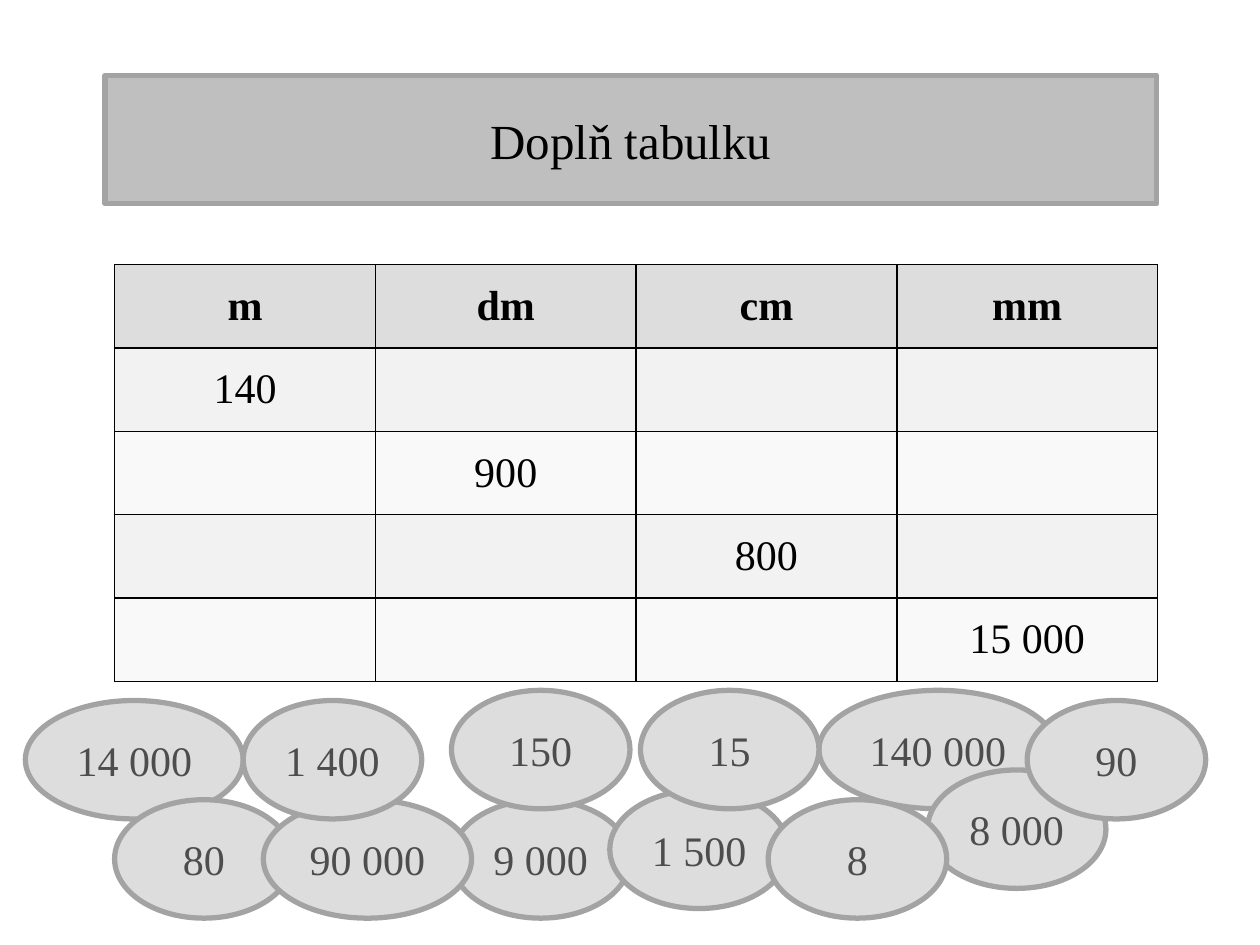
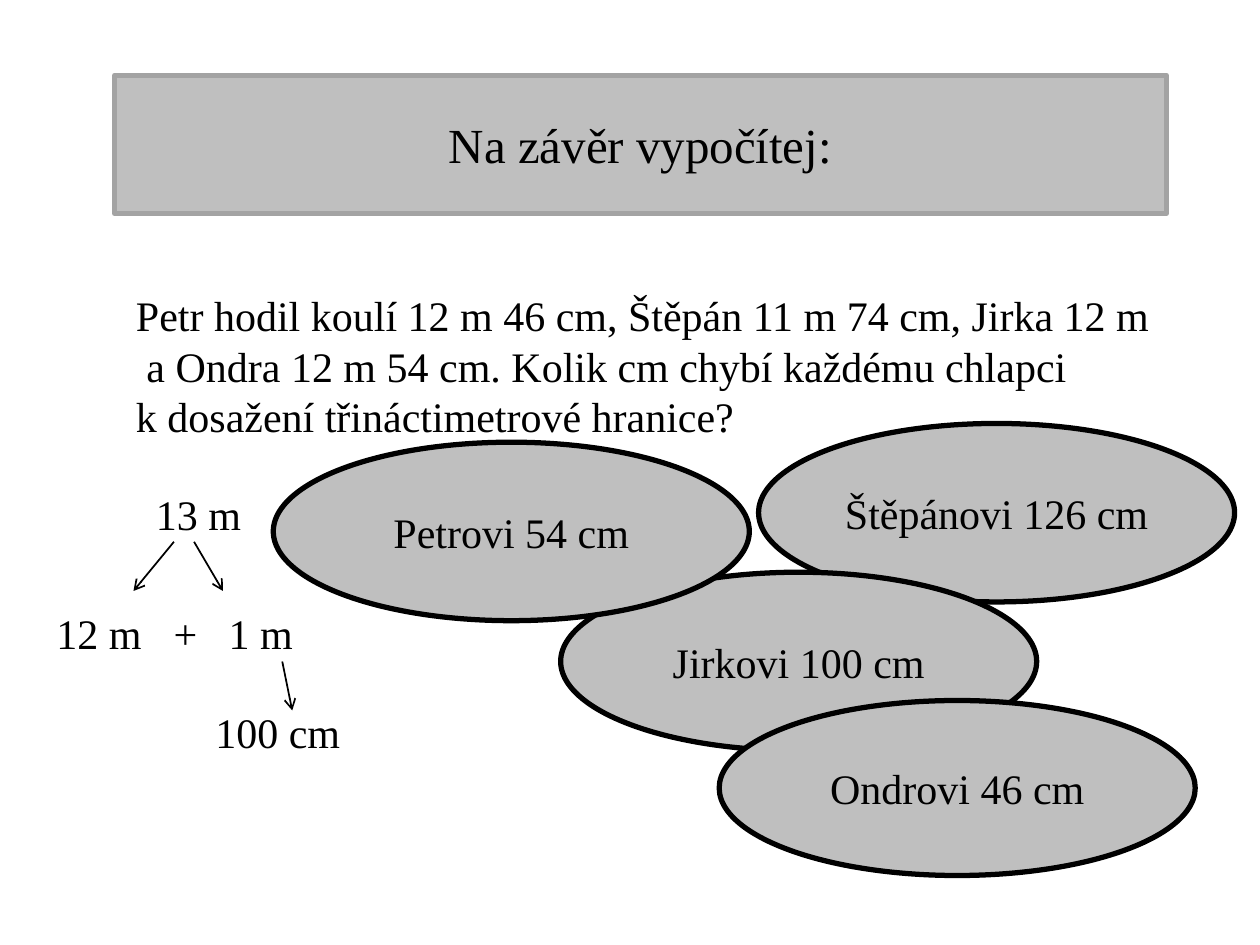
from dataclasses import dataclass

from lxml import etree
from pptx import Presentation
from pptx import util as u
from pptx.dml.color import RGBColor
from pptx.enum import shapes, text
from pptx.oxml.ns import qn


@dataclass(frozen=True)
class Theme:
    font: str = "Times New Roman"
    title_size: int = 28
    text_size: int = 24
    thick: int = 3
    thin: int = 1
    ink: str = "000000"
    soft_ink: str = "4D4D4D"
    band: str = "BFBFBF"
    edge: str = "A3A3A3"
    header: str = "DDDDDD"
    odd_row: str = "F2F2F2"
    even_row: str = "F9F9F9"


THEME = Theme()
CENTER, LEFT = text.PP_ALIGN.CENTER, text.PP_ALIGN.LEFT
MIDDLE, TOP = text.MSO_ANCHOR.MIDDLE, text.MSO_ANCHOR.TOP


# Formatting helpers
def points(*lengths):
    return [u.Pt(length) for length in lengths]


def place(shape, box):
    shape.left, shape.top, shape.width, shape.height = points(*box)


def paint(shape, fill, line):
    shape.fill.solid()
    shape.fill.fore_color.rgb = RGBColor.from_string(fill)
    shape.line.color.rgb = RGBColor.from_string(line)
    shape.line.width = u.Pt(THEME.thick)


def write(frame, *lines, size=THEME.text_size, color=THEME.ink, bold=False,
          align=LEFT, anchor=TOP):
    frame.word_wrap = True
    frame.auto_size = text.MSO_AUTO_SIZE.NONE
    frame.vertical_anchor = anchor
    for index, line in enumerate(lines):
        paragraph = frame.add_paragraph() if index else frame.paragraphs[0]
        paragraph.alignment = align
        paragraph.space_before = u.Pt(0)
        run = paragraph.add_run()
        run.text = line
        run.font.name = THEME.font
        run.font.size = u.Pt(size)
        run.font.bold = bold
        run.font.color.rgb = RGBColor.from_string(color)


def remove_bullets(frame):
    for paragraph in frame.paragraphs:
        properties = paragraph._p.get_or_add_pPr()
        properties.set("marL", "0")
        properties.set("indent", "0")
        etree.SubElement(properties, qn("a:buNone"))


def add_cell_borders(cell):
    properties = cell._tc.get_or_add_tcPr()
    for index, side in enumerate(("lnL", "lnR", "lnT", "lnB")):
        border = etree.Element(qn(f"a:{side}"), w=str(u.Pt(THEME.thin)))
        fill = etree.SubElement(border, qn("a:solidFill"))
        etree.SubElement(fill, qn("a:srgbClr"), val=THEME.ink)
        properties.insert(index, border)


# Slide elements
def add_title(slide, title, box):
    shape = slide.shapes.title
    place(shape, box)
    paint(shape, THEME.band, THEME.edge)
    write(shape.text_frame, title, size=THEME.title_size, align=CENTER, anchor=MIDDLE)


def add_body(slide, lines, box):
    body = slide.placeholders[1]
    place(body, box)
    write(body.text_frame, *lines)
    remove_bullets(body.text_frame)


def add_label(slide, label, box):
    write(slide.shapes.add_textbox(*points(*box)).text_frame, label)


def add_ellipse(slide, label, box, fill, line, color):
    shape = slide.shapes.add_shape(shapes.MSO_SHAPE.OVAL, *points(*box))
    shape.shadow.inherit = False
    paint(shape, fill, line)
    frame = shape.text_frame
    frame.margin_left = frame.margin_right = 0
    write(frame, label, color=color, align=CENTER, anchor=MIDDLE)


def add_arrow(slide, start, end):
    arrow = slide.shapes.add_connector(shapes.MSO_CONNECTOR.STRAIGHT,
                                       *points(*start, *end))
    arrow.line.color.rgb = RGBColor.from_string(THEME.ink)
    arrow.line.width = u.Pt(THEME.thin)
    etree.SubElement(arrow.line._get_or_add_ln(), qn("a:tailEnd"), type="arrow")
    etree.SubElement(arrow._element.spPr, qn("a:effectLst"))


def add_unit_table(slide, rows, box):
    table = slide.shapes.add_table(len(rows), len(rows[0]), *points(*box)).table
    table.first_row = table.horz_banding = False
    for row_index, row in enumerate(rows):
        fill = THEME.odd_row if row_index % 2 else THEME.even_row
        if row_index == 0:
            fill = THEME.header
        for column_index, value in enumerate(row):
            cell = table.cell(row_index, column_index)
            cell.fill.solid()
            cell.fill.fore_color.rgb = RGBColor.from_string(fill)
            add_cell_borders(cell)
            if value:
                cell.vertical_anchor = MIDDLE
                write_cell(cell, value, bold=row_index == 0)


def write_cell(cell, value, bold):
    write(cell.text_frame, value, bold=bold, align=CENTER, anchor=MIDDLE)


# Slide 1: unit table with the numbers to fill in
def build_table_slide(presentation):
    slide = presentation.slides.add_slide(presentation.slide_layouts[5])
    add_title(slide, "Doplň tabulku", (60, 43, 601, 73.5))

    units = ["m", "dm", "cm", "mm"]
    given = ["140", "900", "800", "15 000"]
    rows = [units] + [[value if column == row else "" for column in range(len(units))]
                      for row, value in enumerate(given)]
    add_unit_table(slide, rows, (65.5, 151.2, 596, 238.25))

    height, normal = 67.7, 102
    answers = [
        ("14 000", 14.5, 400.3, 124.5),
        ("140 000", 468, 394.5, 136),
        ("8 000", 530, 440, normal),
        ("90", 587, 400.3, normal),
        ("9 000", 258, 457, normal),
        ("150", 258, 394.5, normal),
        ("1 500", 348.5, 451.5, normal),
        ("15", 366, 394.5, normal),
        ("8", 439, 457, normal),
        ("80", 65.5, 457, normal),
        ("90 000", 150.5, 457, 119),
        ("1 400", 139, 400.3, normal),
    ]
    for label, left, top, width in answers:
        add_ellipse(slide, label, (left, top, width, height),
                    THEME.header, THEME.edge, THEME.soft_ink)


# Slide 2: word problem, conversion tree and results
def build_problem_slide(presentation):
    slide = presentation.slides.add_slide(presentation.slide_layouts[1])
    add_title(slide, "Na závěr vypočítej:", (65.5, 43, 601, 79))
    add_body(slide, [
        "Petr hodil koulí 12 m 46 cm, Štěpán 11 m 74 cm, Jirka 12 m",
        " a Ondra 12 m 54 cm. Kolik cm chybí každému chlapci",
        "k dosažení třináctimetrové hranice?",
    ], (70.5, 162, 601, 94.5))

    # Conversion tree
    for label, left, top, width in [
        ("13 m", 82, 275.8, 80),
        ("12 m", 25.2, 343.5, 66),
        ("+", 92.2, 343.5, 30),
        ("1 m", 123.6, 343.5, 60),
        ("100 cm", 116, 400.3, 96.5),
    ]:
        add_label(slide, label, (left, top, width, 36))
    for start, end in [
        ((99.4, 309.6), (76.3, 337.7)),
        ((110.9, 309.6), (127.4, 337.7)),
        ((161.3, 378), (167, 406)),
    ]:
        add_arrow(slide, start, end)

    # Results
    for label, left, top, height in [
        ("Štěpánovi 126 cm", 433.5, 242, 102),
        ("Jirkovi 100 cm", 320.4, 327, 102),
        ("Petrovi 54 cm", 156.2, 252.7, 102),
        ("Ondrovi 46 cm", 411, 400.3, 100),
    ]:
        add_ellipse(slide, label, (left, top, 272, height),
                    THEME.band, THEME.ink, THEME.ink)


def main():
    presentation = Presentation()
    presentation.slide_width, presentation.slide_height = points(720, 540)
    build_table_slide(presentation)
    build_problem_slide(presentation)
    presentation.save("out.pptx")


if __name__ == "__main__":
    main()
